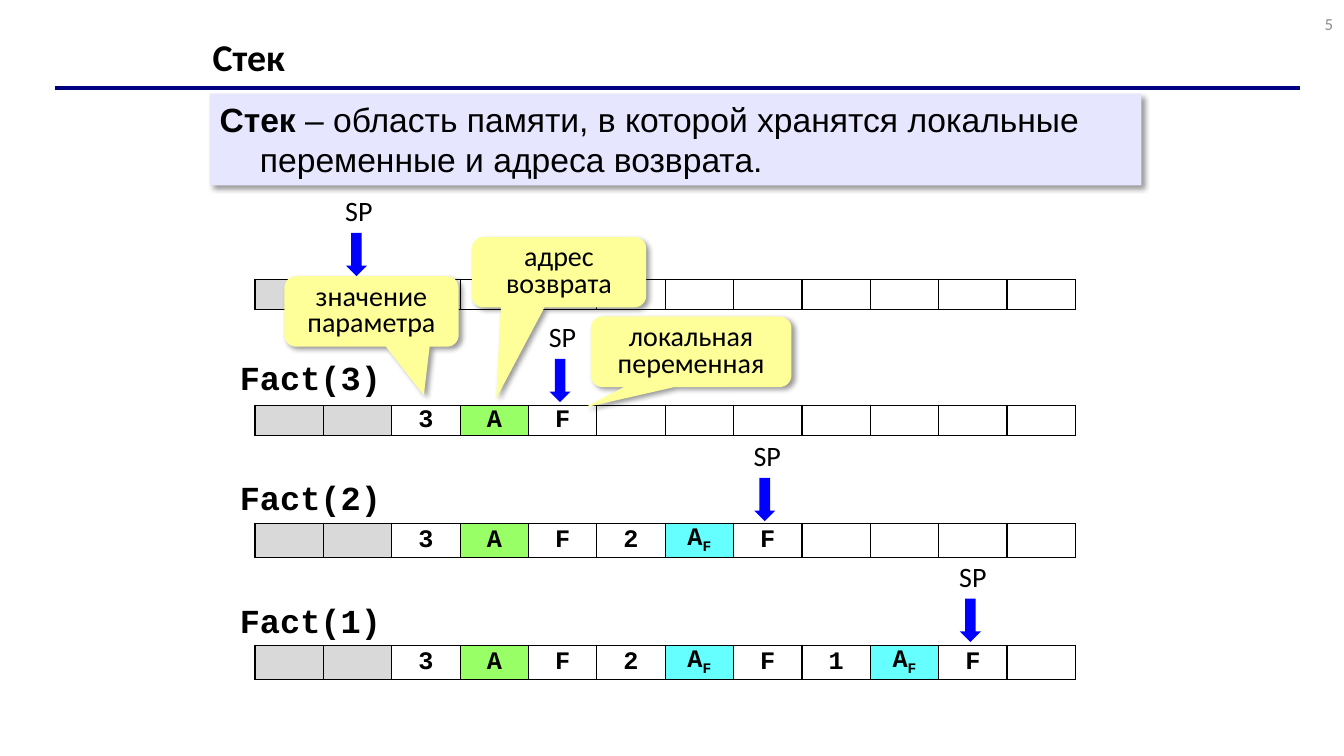
from dataclasses import dataclass

from lxml.etree import SubElement
from pptx import Presentation
from pptx.dml.color import RGBColor
from pptx.enum.shapes import MSO_CONNECTOR, MSO_SHAPE
from pptx.enum.text import MSO_ANCHOR, PP_ALIGN
from pptx.oxml.ns import qn
from pptx.util import Inches, Pt

BLACK = RGBColor(0x00, 0x00, 0x00)
NAVY = RGBColor(0x00, 0x00, 0x80)
BLUE = RGBColor(0x00, 0x00, 0xFF)
LAVENDER = RGBColor(0xE6, 0xE6, 0xFF)
YELLOW = RGBColor(0xFF, 0xFF, 0x99)
GREEN = RGBColor(0x99, 0xFF, 0x66)
CYAN = RGBColor(0x66, 0xFF, 0xFF)
LIGHT_GRAY = RGBColor(0xD9, 0xD9, 0xD9)
GRAY = RGBColor(0x8C, 0x8C, 0x8C)

CELL_COUNT = 12
STACK_LEFT, STACK_WIDTH, STACK_HEIGHT = 2.53, 8.14, 0.3
CELL_FILLS = {"used": LIGHT_GRAY, "A": GREEN, "AF": CYAN}


@dataclass
class Stack:
    top: float
    values: list[str]
    pointer_left: float
    pointer_top: float
    call: str = ""
    call_top: float = 0


@dataclass
class Callout:
    text: str
    left: float
    top: float
    width: float
    tip_x: float
    tip_y: float


STACKS = [
    Stack(2.77, [], 3.33, 1.92),
    Stack(4.02, ["3", "A", "F"], 5.35, 3.17, "Fact(3)", 3.49),
    Stack(5.19, ["3", "A", "F", "2", "AF", "F"], 7.38, 4.35, "Fact(2)", 4.68),
    Stack(6.4, ["3", "A", "F", "2", "AF", "F", "1", "AF", "F"], 9.42, 5.55, "Fact(1)", 5.9),
]

CALLOUTS = [
    Callout("значение параметра", 2.82, 2.74, 1.73, 0.3, 1.19),
    Callout("адрес возврата", 4.68, 2.35, 1.73, -0.36, 1.79),
    Callout("локальная переменная", 5.86, 3.14, 1.99, -0.53, 0.79),
]


def set_font(p, name: str, size: float, color: RGBColor = BLACK, bold: bool = False) -> None:
    p.font.name, p.font.size, p.font.bold = name, Pt(size), bold
    p.font.color.rgb = color


def add_text(shapes, text: str, left: float, top: float, width: float, height: float, wrap: bool = True):
    tf = shapes.add_textbox(Inches(left), Inches(top), Inches(width), Inches(height)).text_frame
    tf.word_wrap = wrap
    p = tf.paragraphs[0]
    p.text = text
    return tf, p


def add_filled(shapes, kind: MSO_SHAPE, left: float, top: float, width: float, height: float, color: RGBColor):
    sp = shapes.add_shape(kind, Inches(left), Inches(top), Inches(width), Inches(height))
    sp.shadow.inherit = False
    sp.fill.solid()
    sp.fill.fore_color.rgb = color
    sp.line.fill.background()
    return sp


def add_shadow(sp) -> None:
    effects = sp._element.spPr.find(qn("a:effectLst"))
    shadow = SubElement(effects, qn("a:outerShdw"), blurRad=str(Pt(4)), dist=str(Pt(3)),
                        dir="2700000", algn="tl", rotWithShape="0")
    color = SubElement(shadow, qn("a:srgbClr"), val=str(BLACK))
    SubElement(color, qn("a:alpha"), val="40000")


def add_header(s) -> None:
    line = s.shapes.add_connector(MSO_CONNECTOR.STRAIGHT, Inches(0.55), Inches(0.87), Inches(12.89), Inches(0.87))
    line.line.color.rgb = NAVY
    line.line.width = Pt(3)
    SubElement(line._element.spPr, qn("a:effectLst"))

    tf, p = add_text(s.shapes, "Стек", 2.01, 0.33, 9.16, 0.52)
    tf.vertical_anchor = MSO_ANCHOR.MIDDLE
    p.line_spacing = 0.9
    set_font(p, "Calibri", 27, bold=True)

    tf, p = add_text(s.shapes, "5", 10.21, -0.02, 3.11, 0.52)
    tf.vertical_anchor = MSO_ANCHOR.MIDDLE
    p.alignment = PP_ALIGN.RIGHT
    set_font(p, "Calibri", 12, GRAY)


def add_definition(s) -> None:
    sp = add_filled(s.shapes, MSO_SHAPE.RECTANGLE, 2.08, 0.93, 9.24, 0.91, LAVENDER)
    add_shadow(sp)
    tf = sp.text_frame
    tf.vertical_anchor = MSO_ANCHOR.TOP
    p = tf.paragraphs[0]
    p.alignment = PP_ALIGN.LEFT
    set_font(p, "Arial", 24)
    pPr = p._p.get_or_add_pPr()
    pPr.set("marL", str(Inches(0.4)))
    pPr.set("indent", str(Inches(-0.4)))
    r = p.add_run()
    r.text = "Стек "
    r.font.bold = True
    p.add_run().text = "– область памяти, в которой хранятся локальные переменные и адреса возврата."


def add_pointer(s, left: float, top: float) -> None:
    group = s.shapes.add_group_shape()
    tf, p = add_text(group.shapes, "SP", left, top, 0.46, 0.43)
    tf.margin_left = tf.margin_right = tf.margin_top = tf.margin_bottom = 0
    p.alignment = PP_ALIGN.CENTER
    p.space_after = Pt(10)
    set_font(p, "Calibri", 20)
    add_filled(group.shapes, MSO_SHAPE.DOWN_ARROW, left + 0.1, top + 0.39, 0.21, 0.43, BLUE)


def add_borders(cell) -> None:
    tcPr = cell._tc.get_or_add_tcPr()
    for side in ("a:lnL", "a:lnR", "a:lnT", "a:lnB"):
        ln = SubElement(tcPr, qn(side), w=str(Pt(1)))
        SubElement(SubElement(ln, qn("a:solidFill")), qn("a:srgbClr"), val=str(BLACK))


def fill_cell(cell, value: str) -> None:
    add_borders(cell)
    if value in CELL_FILLS:
        cell.fill.solid()
        cell.fill.fore_color.rgb = CELL_FILLS[value]
    else:
        cell.fill.background()
    cell.margin_left = cell.margin_right = cell.margin_top = cell.margin_bottom = 0
    cell.vertical_anchor = MSO_ANCHOR.MIDDLE
    p = cell.text_frame.paragraphs[0]
    p.alignment = PP_ALIGN.CENTER
    set_font(p, "Courier New", 18, bold=True)
    if value and value != "used":
        p.add_run().text = value[0]
        if value[1:]:
            r = p.add_run()
            r.text = value[1:]
            r.font._element.set("baseline", "-25000")


def add_stack(s, stack: Stack) -> None:
    table = s.shapes.add_table(1, CELL_COUNT, Inches(STACK_LEFT), Inches(stack.top),
                               Inches(STACK_WIDTH), Inches(STACK_HEIGHT)).table
    table.first_row = table.horz_banding = False
    values = ["used", "used", *stack.values]
    values += [""] * (CELL_COUNT - len(values))
    for cell, value in zip(table.rows[0].cells, values):
        fill_cell(cell, value)
    add_pointer(s, stack.pointer_left, stack.pointer_top)
    if stack.call:
        _, p = add_text(s.shapes, stack.call, 2.28, stack.call_top, 1.61, 0.51, wrap=False)
        set_font(p, "Courier New", 24, bold=True)


def add_callout(s, callout: Callout) -> None:
    sp = add_filled(s.shapes, MSO_SHAPE.ROUNDED_RECTANGULAR_CALLOUT,
                    callout.left, callout.top, callout.width, 0.7, YELLOW)
    sp.adjustments[0], sp.adjustments[1] = callout.tip_x, callout.tip_y
    add_shadow(sp)
    tf = sp.text_frame
    tf.vertical_anchor = MSO_ANCHOR.MIDDLE
    p = tf.paragraphs[0]
    p.text = callout.text
    p.alignment = PP_ALIGN.CENTER
    p.line_spacing = 0.8
    set_font(p, "Calibri", 20)


def main() -> None:
    prs = Presentation()
    prs.slide_width, prs.slide_height = Inches(13.33), Inches(7.5)
    s = prs.slides.add_slide(prs.slide_layouts[6])
    add_header(s)
    add_definition(s)
    for stack in STACKS:
        add_stack(s, stack)
    for callout in CALLOUTS:
        add_callout(s, callout)
    prs.save("out.pptx")


if __name__ == "__main__":
    main()
